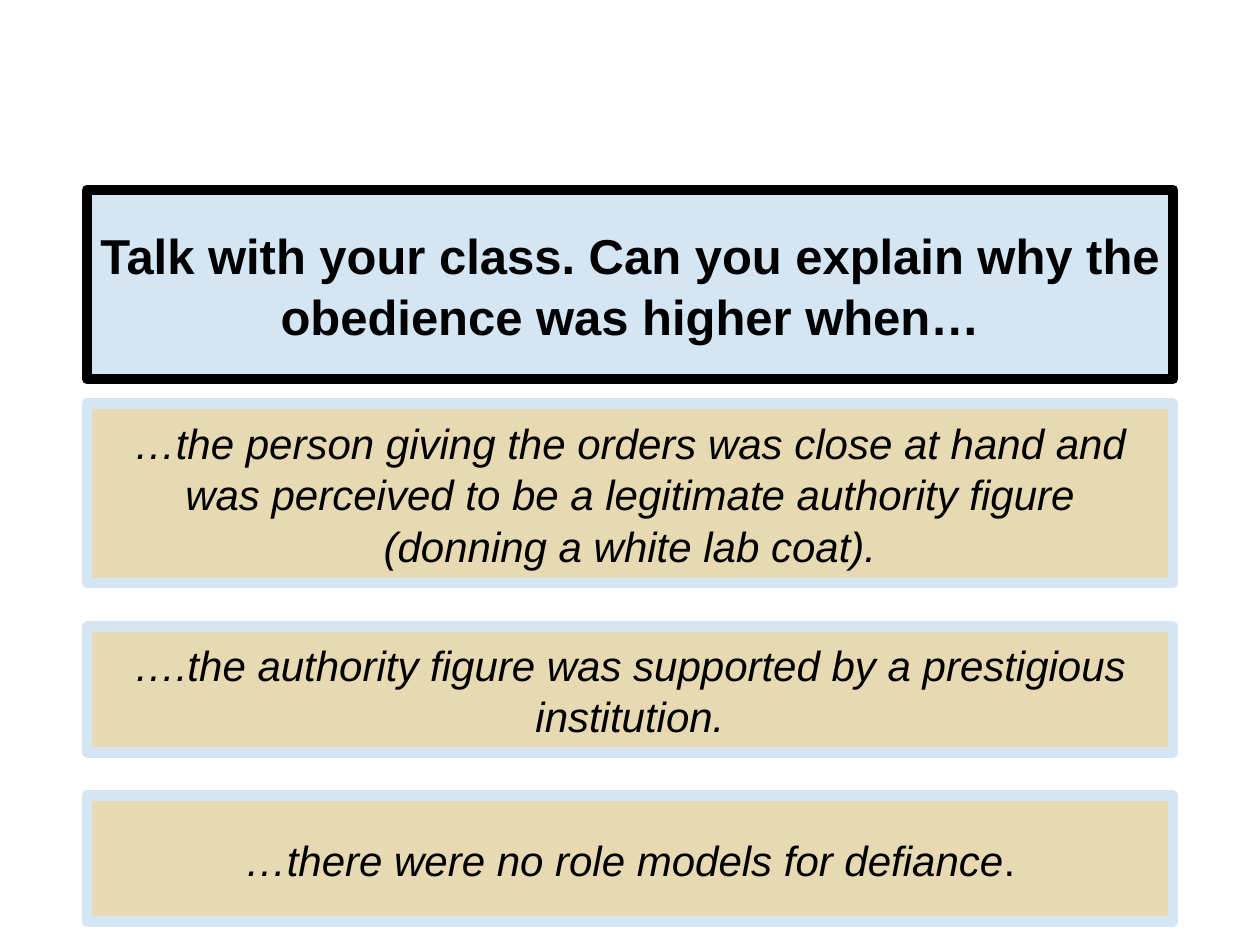
from dataclasses import dataclass

from lxml.etree import SubElement
from pptx import Presentation
from pptx.dml.color import RGBColor
from pptx.enum.text import MSO_ANCHOR, MSO_AUTO_SIZE, PP_ALIGN
from pptx.oxml.ns import qn
from pptx.shapes.placeholder import SlidePlaceholder
from pptx.text.text import _Paragraph
from pptx.util import Pt


@dataclass(frozen=True)
class Theme:
    font: str = "Arial"
    ink: str = "000000"
    sky: str = "D4E5F4"
    sand: str = "E7D9B1"
    head: float = 28
    body: float = 24
    edge: float = 6
    lead: float = 1.03


@dataclass(frozen=True)
class Panel:
    slot: int
    top: float
    high: float
    text: str
    tail: str = ""


THEME = Theme()
LEFT, WIDE = 49.6, 620.8
HEAD = Panel(0, 108.6, 108, "Talk with your class. Can you explain why the obedience was higher when…")
CASES = (
    Panel(1, 230.6, 102.6, "…the person giving the orders was close at hand and was perceived "
          "to be a legitimate authority figure (donning a white lab coat)."),
    Panel(2, 358, 72, "….the authority figure was supported by a prestigious institution."),
    Panel(3, 454.6, 72, "…there were no role models for defiance", "."),
)


def write(para: _Paragraph, text: str, *, size: float, bold: bool = False,
          italic: bool = False) -> None:
    run = para.add_run()
    run.text = text
    font = run.font
    font.name, font.size = THEME.font, Pt(size)
    font.bold, font.italic = bold, italic
    font.color.rgb = RGBColor.from_string(THEME.ink)


def frame(shape: SlidePlaceholder, panel: Panel, fill: str, edge: str) -> _Paragraph:
    shape.left, shape.top = Pt(LEFT), Pt(panel.top)
    shape.width, shape.height = Pt(WIDE), Pt(panel.high)
    shape.shadow.inherit = False
    shape.fill.solid()
    shape.fill.fore_color.rgb = RGBColor.from_string(fill)
    shape.line.color.rgb = RGBColor.from_string(edge)
    shape.line.width = Pt(THEME.edge)
    box = shape.text_frame
    box.word_wrap = True
    box.auto_size = MSO_AUTO_SIZE.NONE
    box.vertical_anchor = MSO_ANCHOR.MIDDLE
    box.margin_left = box.margin_right = Pt(7)
    para = box.paragraphs[0]
    para.alignment = PP_ALIGN.CENTER
    para.line_spacing = THEME.lead
    para.space_before = para.space_after = Pt(0)
    props = para._p.get_or_add_pPr()
    props.set("marL", "0")
    props.set("indent", "0")
    SubElement(props, qn("a:buNone"))
    return para


def main() -> None:
    deck = Presentation()
    deck.slide_width, deck.slide_height = Pt(720), Pt(540)
    slide = deck.slides.add_slide(deck.slide_layouts.get_by_name("Comparison"))
    slots = {shape.placeholder_format.idx: shape for shape in slide.placeholders}

    para = frame(slots.pop(HEAD.slot), HEAD, THEME.sky, THEME.ink)
    write(para, HEAD.text, size=THEME.head, bold=True)
    for case in CASES:
        para = frame(slots.pop(case.slot), case, THEME.sand, THEME.sky)
        write(para, case.text, size=THEME.body, italic=True)
        if case.tail:
            write(para, case.tail, size=THEME.body)
    for spare in slots.values():
        spare.element.getparent().remove(spare.element)

    deck.save("out.pptx")


if __name__ == "__main__":
    main()
